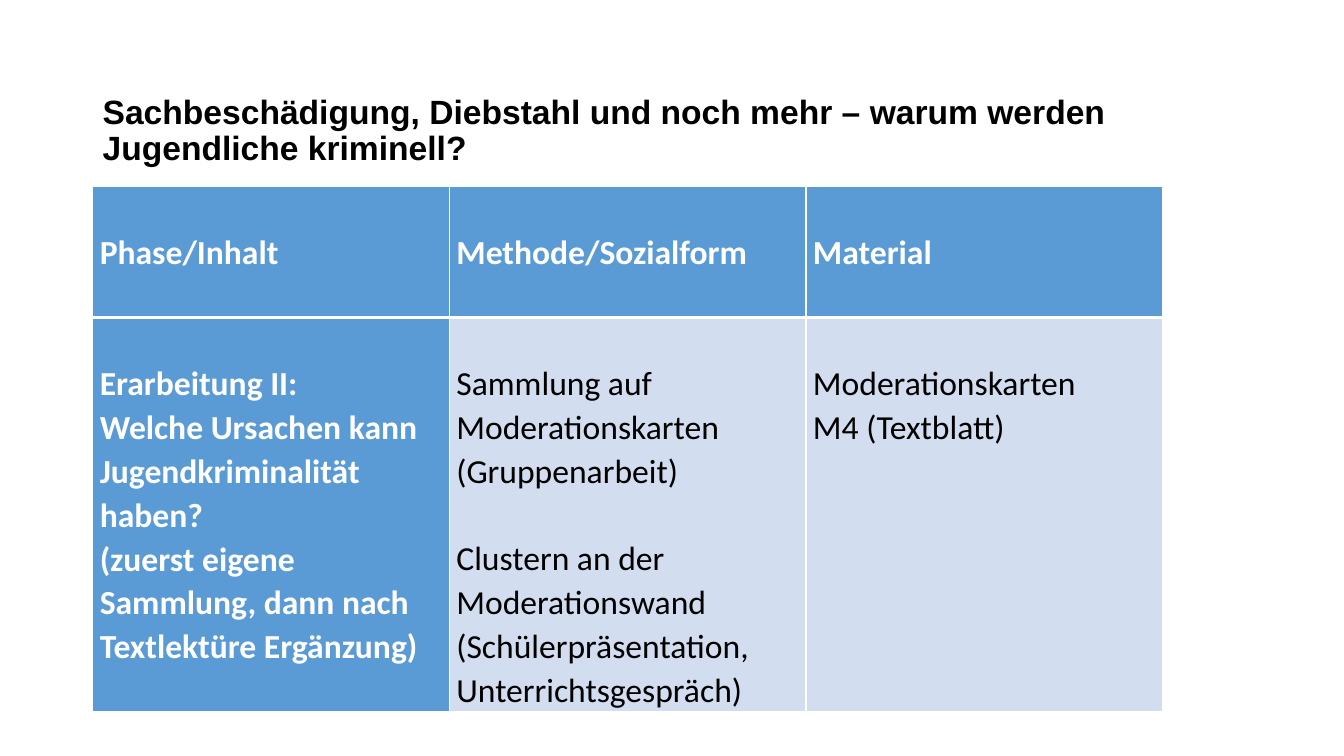
from lxml import etree
from pptx import Presentation
from pptx.dml.color import RGBColor
from pptx.enum.text import MSO_ANCHOR
from pptx.oxml.ns import qn
from pptx.util import Inches, Pt

MIDDLE = MSO_ANCHOR.MIDDLE
WHITE, BLACK, BLUE, PALE = "FFFFFF", "000000", "5B9BD5", "D2DEEF"
LINE = 0.43  # height of one table text line in inches


def style(p, font, color, bold, spacing):
    p.line_spacing = spacing
    for r in p.runs:
        r.font.name = font
        r.font.size = Pt(24)
        r.font.bold = bold
        r.font.color.rgb = RGBColor.from_string(color)


def border(cell, side, width):
    ln = etree.SubElement(cell._tc.get_or_add_tcPr(), qn("a:" + side), w=str(Pt(width)))
    fill = etree.SubElement(ln, qn("a:solidFill"))
    etree.SubElement(fill, qn("a:srgbClr"), val=WHITE)


prs = Presentation()
prs.slide_width, prs.slide_height = Inches(13.33), Inches(7.5)
s = prs.slides.add_slide(prs.slide_layouts[6])

# Title
tf = s.shapes.add_textbox(Inches(0.92), Inches(0.4), Inches(11.5), Inches(1.45)).text_frame
tf.word_wrap = True
tf.vertical_anchor = MIDDLE
tf.margin_top = Inches(0.41)
tf.text = "Sachbeschädigung, Diebstahl und noch mehr – warum werden Jugendliche kriminell?"
style(tf.paragraphs[0], "Arial", BLACK, True, 0.9)

# Lesson plan table
rows = [
    ["Phase/Inhalt", "Methode/Sozialform", "Material"],
    [
        "Erarbeitung II:\nWelche Ursachen kann Jugendkriminalität haben?\n"
        "(zuerst eigene Sammlung, dann nach Textlektüre Ergänzung)",
        "Sammlung auf Moderationskarten\n(Gruppenarbeit)\n"
        "Clustern an der Moderationswand\n(Schülerpräsentation, Unterrichtsgespräch)",
        "Moderationskarten\nM4 (Textblatt)",
    ],
]
table = s.shapes.add_table(2, 3, Inches(0.92), Inches(1.85), Inches(10.61), Inches(5.21)).table
for row, height in zip(table.rows, (1.3, 3.91)):
    row.height = Inches(height)

for i, texts in enumerate(rows):
    for j, text in enumerate(texts):
        cell = table.cell(i, j)
        strong = i == 0 or j == 0
        cell.margin_left = cell.margin_right = Inches(0.07)
        cell.margin_top, cell.margin_bottom = Inches(LINE), 0
        # The rule between header and body is thicker
        border(cell, "lnL", 1)
        border(cell, "lnR", 1)
        border(cell, "lnT", 3 if i == 1 else 1)
        border(cell, "lnB", 3 if i == 0 else 1)
        cell.fill.solid()
        cell.fill.fore_color.rgb = RGBColor.from_string(BLUE if strong else PALE)
        cell.text_frame.text = text
        for p in cell.text_frame.paragraphs:
            style(p, "Calibri", WHITE if strong else BLACK, strong, 1.07)

# Gap before the second method step
table.cell(1, 1).text_frame.paragraphs[2].space_before = Pt(31)

prs.save("out.pptx")
